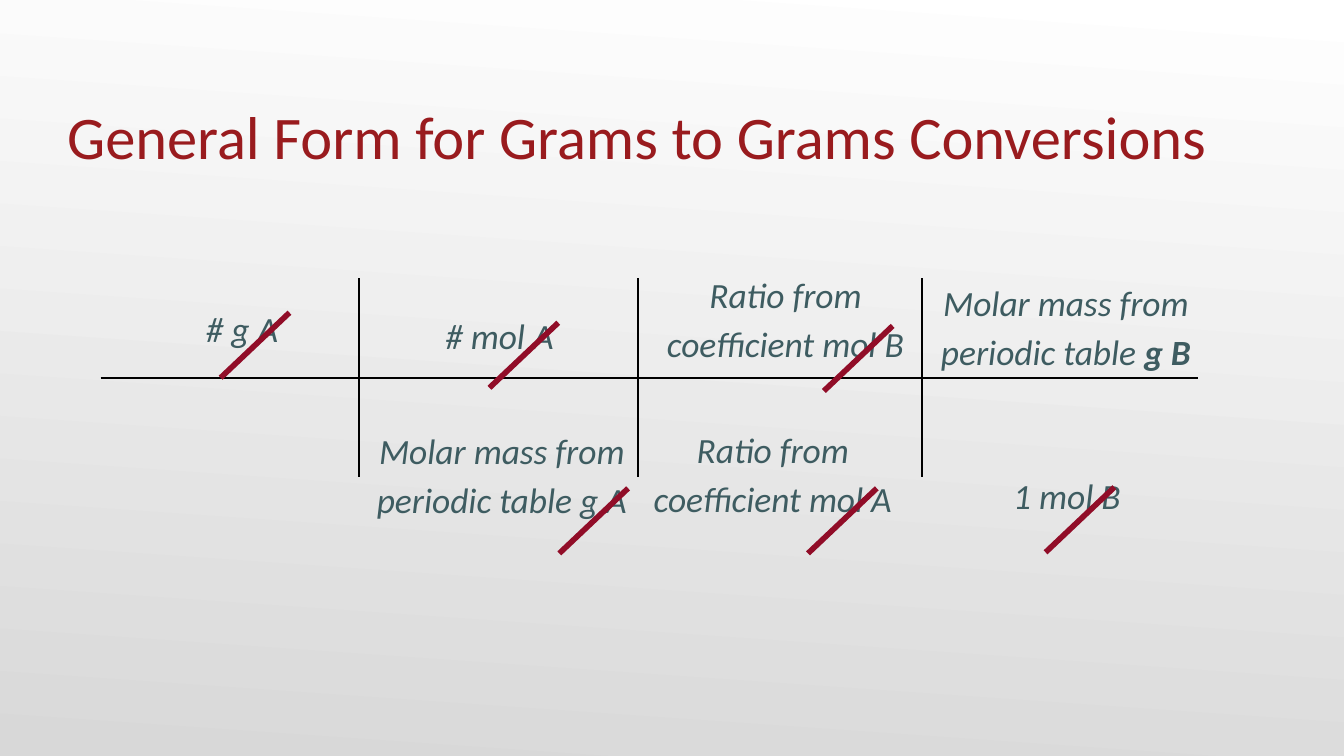
from itertools import product

from lxml import etree
from pptx import Presentation
from pptx import util as u
from pptx.dml.color import RGBColor
from pptx.enum import shapes, text
from pptx.oxml import ns

TITLE_RED = RGBColor(0x99, 0x1B, 0x1E)
SLATE = RGBColor(0x3E, 0x5C, 0x61)
STRIKE_RED = RGBColor(0x91, 0x0D, 0x28)
BLACK = RGBColor(0, 0, 0)
WHITE = RGBColor(0xFF, 0xFF, 0xFF)
GREY = RGBColor(0xD8, 0xD8, 0xD8)
NO_STYLE = "{2D5ABB26-0587-4C30-8999-92F81FD0307C}"


def apply(target, values):
    for name, value in values.items():
        setattr(target, name, value)


class ConversionSlide:
    title_font = {"name": "Calibri", "size": u.Pt(32.4)}
    label_font = {"name": "Calibri", "size": u.Pt(19), "italic": True}
    label_para = {"alignment": text.PP_ALIGN.CENTER, "line_spacing": 1.15}

    def __init__(self, deck):
        self.page = deck.slides.add_slide(deck.slide_layouts[5])

    def background(self, start, end, angle):
        fill = self.page.background.fill
        fill.gradient()
        fill.gradient_angle = angle
        for stop, position, color in zip(fill.gradient_stops, (0, 1), (start, end)):
            stop.position = position
            stop.color.rgb = color

    def title(self, wording, left, top, width, height):
        box = self.page.shapes.title
        apply(box, {"left": u.Cm(left), "top": u.Cm(top),
                    "width": u.Cm(width), "height": u.Cm(height)})
        frame = box.text_frame
        frame.text = wording
        apply(frame, {"margin_left": 0, "margin_right": 0, "margin_bottom": 0,
                      "margin_top": u.Cm(0.13), "word_wrap": True,
                      "auto_size": text.MSO_AUTO_SIZE.NONE,
                      "vertical_anchor": text.MSO_ANCHOR.BOTTOM})
        para = frame.paragraphs[0]
        para.alignment = text.PP_ALIGN.LEFT
        apply(para.font, self.title_font)
        para.font.color.rgb = TITLE_RED

    def label(self, wording, left, top, width, height, bold_end=""):
        box = self.page.shapes.add_textbox(*map(u.Cm, (left, top, width, height)))
        frame = box.text_frame
        margins = dict.fromkeys(
            ("margin_left", "margin_top", "margin_right", "margin_bottom"), u.Cm(0.25))
        apply(frame, {**margins, "word_wrap": True})
        para = frame.paragraphs[0]
        apply(para, self.label_para)
        for part, bold in ((wording, False), (bold_end, True)):
            if part:
                span = para.add_run()
                span.text = part
                apply(span.font, {**self.label_font, "bold": bold})
                span.font.color.rgb = SLATE

    def border(self, cell, side):
        line = etree.SubElement(cell._tc.get_or_add_tcPr(), ns.qn(f"a:{side}"),
                                w=str(u.Pt(1)))
        fill = etree.SubElement(line, ns.qn("a:solidFill"))
        etree.SubElement(fill, ns.qn("a:srgbClr"), val=str(BLACK))

    def grid(self, left, top, widths, heights):
        frame = self.page.shapes.add_table(
            len(heights), len(widths),
            *map(u.Cm, (left, top, sum(widths), sum(heights))))
        table = frame.table
        apply(table, {"first_row": False, "horz_banding": False})
        table._tbl.tblPr.find(ns.qn("a:tableStyleId")).text = NO_STYLE
        for column, width in zip(table.columns, widths):
            column.width = u.Cm(width)
        for row, height in zip(table.rows, heights):
            row.height = u.Cm(height)
        # Only the inner edges are ruled
        for r, c in product(range(len(heights)), range(len(widths))):
            cell = table.cell(r, c)
            inner = {"lnL": c > 0, "lnR": c < len(widths) - 1,
                     "lnT": r > 0, "lnB": r < len(heights) - 1}
            for side, ruled in inner.items():
                if ruled:
                    self.border(cell, side)
            cell.fill.background()

    def strike(self, left, bottom, width=1.3, height=1.23):
        line = self.page.shapes.add_connector(
            shapes.MSO_CONNECTOR.STRAIGHT,
            *map(u.Cm, (left, bottom, left + width, bottom - height)))
        line.line.color.rgb = STRIKE_RED
        line.line.width = u.Pt(3)
        etree.SubElement(line._element.spPr, ns.qn("a:effectLst"))


def main():
    deck = Presentation()
    apply(deck, {"slide_width": u.Cm(25.4), "slide_height": u.Cm(14.29)})
    slide = ConversionSlide(deck)

    # Background and title
    slide.background(WHITE, GREY, 266)
    slide.title("General Form for Grams to Grams Conversions", 1.27, 0.86, 22.86, 2.39)

    # Conversion grid
    slide.grid(1.9, 5.26, (4.88, 5.28, 5.36, 5.23), (1.88, 1.88))

    # Factors above and below the bar
    one_line, two_lines = 1.32, 2.26
    slide.label("# g A", 3, 5.44, 3.15, one_line)
    slide.label("# mol A", 7.37, 5.56, 4.14, one_line)
    slide.label("Molar mass from periodic table g A", 6.12, 7.75, 6.73, two_lines)
    slide.label("Ratio from coefficient mol A", 11.66, 7.72, 5.89, two_lines)
    slide.label("Ratio from coefficient mol B", 11.81, 4.8, 6.07, two_lines)
    slide.label("Molar mass from periodic table ", 16.87, 4.95, 6.55, two_lines, "g B")
    slide.label("1 mol B", 17.98, 8.59, 4.37, one_line)

    # Strokes through the cancelled units
    for left, bottom in ((4.17, 7.14), (10.57, 10.46), (9.25, 7.33),
                         (15.27, 10.46), (15.57, 7.39), (19.76, 10.44)):
        slide.strike(left, bottom)

    deck.save("out.pptx")


if __name__ == "__main__":
    main()
